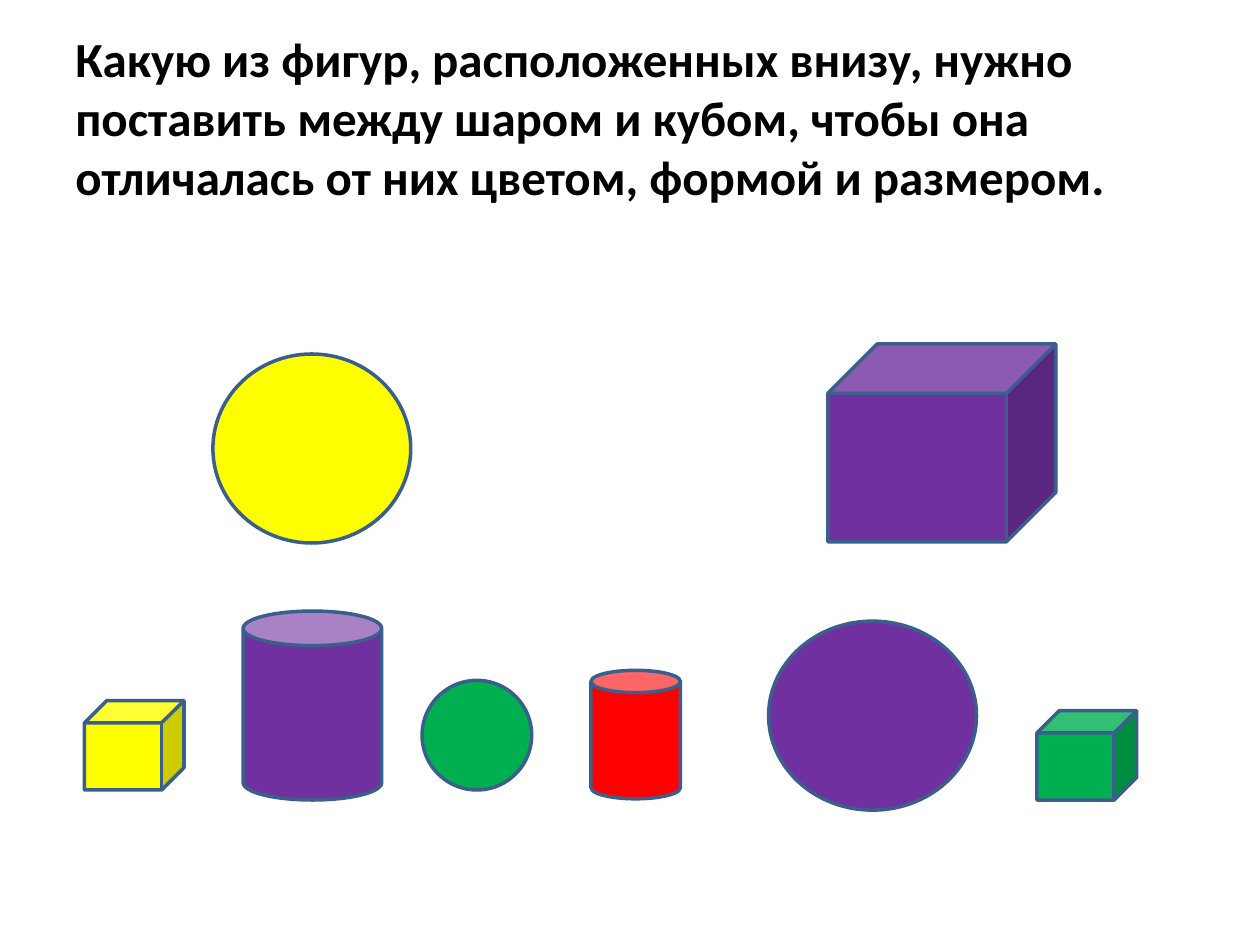
from dataclasses import dataclass

from pptx import Presentation
from pptx.dml.color import RGBColor
from pptx.enum.shapes import MSO_SHAPE
from pptx.enum.text import MSO_ANCHOR, PP_ALIGN
from pptx.util import Inches, Pt

BALL = MSO_SHAPE.OVAL
CUBE = MSO_SHAPE.CUBE
CYLINDER = MSO_SHAPE.CAN
MIDDLE = MSO_ANCHOR.MIDDLE
LEFT = PP_ALIGN.LEFT
BLANK_LAYOUT = 6


@dataclass(frozen=True)
class Theme:
    font: str = "Calibri"
    question_size: int = 28
    outline_width: int = 2
    text: str = "000000"
    outline: str = "3A5F8C"
    yellow: str = "FFFF00"
    green: str = "00B050"
    violet: str = "7030A0"
    red: str = "FF0000"


THEME = Theme()

QUESTION = (
    "Какую из фигур, расположенных внизу, нужно поставить между шаром и кубом, "
    "чтобы она отличалась от них цветом, формой и размером."
)

# Kind, colour, left, top, width, height
GIVEN_SOLIDS = [
    (BALL, THEME.yellow, 1.69, 2.81, 1.57, 1.5),
    (CUBE, THEME.violet, 6.57, 2.73, 1.81, 1.57),
]
ANSWER_SOLIDS = [
    (CUBE, THEME.yellow, 0.67, 5.56, 0.79, 0.71),
    (CYLINDER, THEME.violet, 1.93, 4.85, 1.1, 1.5),
    (BALL, THEME.green, 3.35, 5.4, 0.87, 0.87),
    (CYLINDER, THEME.red, 4.69, 5.32, 0.71, 1.02),
    (BALL, THEME.violet, 6.1, 4.93, 1.65, 1.5),
    (CUBE, THEME.green, 8.23, 5.64, 0.79, 0.71),
]


def set_format(target, values):
    for name, value in values.items():
        setattr(target, name, value)


def add_question(slide, text, left, top, width, height):
    box = slide.shapes.add_textbox(*map(Inches, (left, top, width, height)))
    set_format(box.text_frame, {"word_wrap": True, "vertical_anchor": MIDDLE})
    paragraph = box.text_frame.paragraphs[0]
    paragraph.alignment = LEFT
    run = paragraph.add_run()
    run.text = text
    set_format(run.font, {
        "name": THEME.font,
        "size": Pt(THEME.question_size),
        "bold": True,
    })
    run.font.color.rgb = RGBColor.from_string(THEME.text)


def add_solid(slide, kind, color, left, top, width, height):
    shape = slide.shapes.add_shape(kind, *map(Inches, (left, top, width, height)))
    shape.shadow.inherit = False
    shape.fill.solid()
    shape.fill.fore_color.rgb = RGBColor.from_string(color)
    shape.line.color.rgb = RGBColor.from_string(THEME.outline)
    shape.line.width = Pt(THEME.outline_width)


def main():
    presentation = Presentation()
    set_format(presentation, {"slide_width": Inches(10), "slide_height": Inches(7.5)})
    slide = presentation.slides.add_slide(presentation.slide_layouts[BLANK_LAYOUT])
    add_question(slide, QUESTION, 0.5, 0.3, 9, 1.25)
    for solid in GIVEN_SOLIDS + ANSWER_SOLIDS:
        add_solid(slide, *solid)
    presentation.save("out.pptx")


if __name__ == "__main__":
    main()
